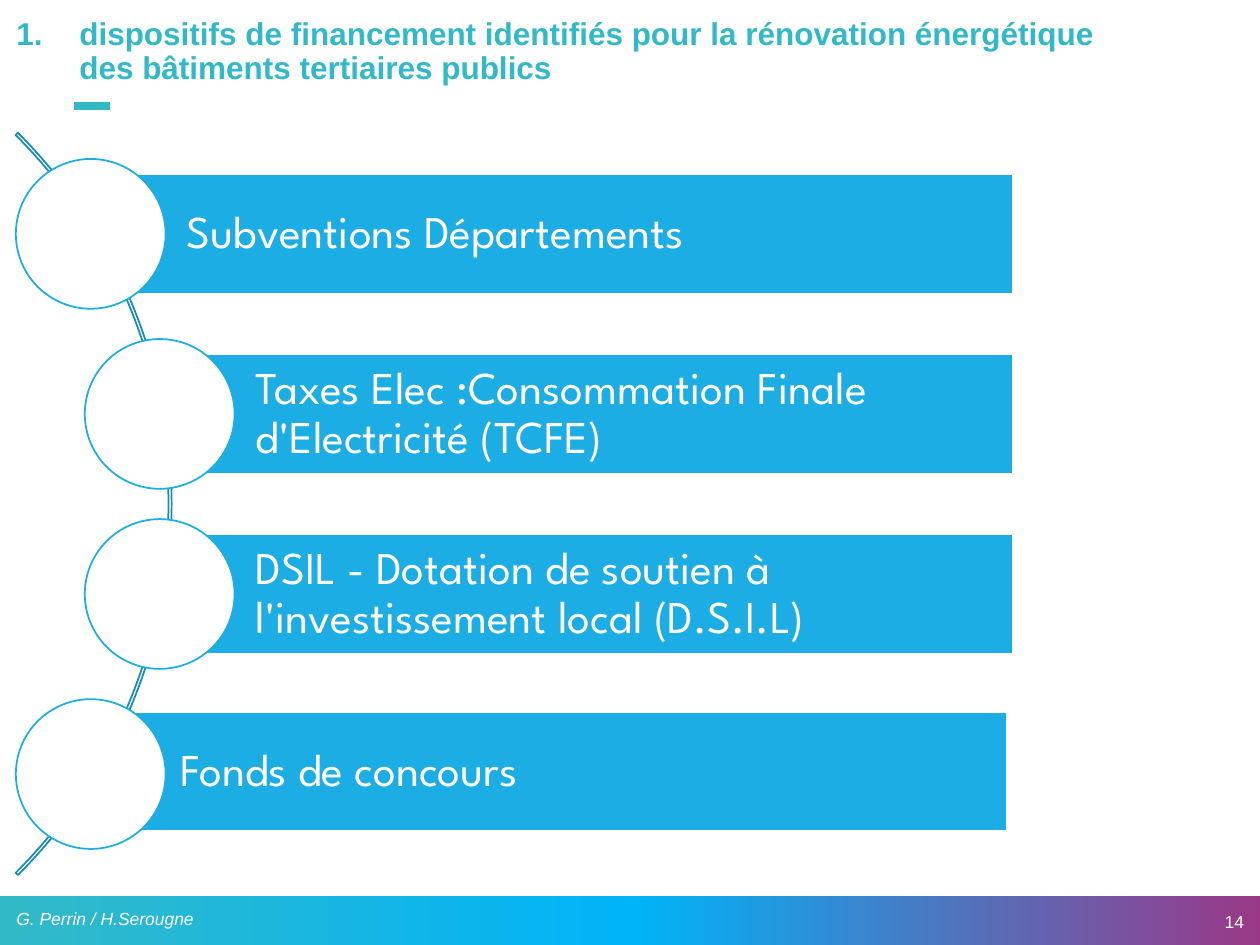
from copy import deepcopy

from lxml import etree
from pptx import Presentation
from pptx.dml.color import RGBColor
from pptx.enum.shapes import MSO_CONNECTOR, MSO_SHAPE
from pptx.enum.text import MSO_ANCHOR, PP_ALIGN
from pptx.oxml.ns import qn
from pptx.util import Cm, Pt

RECTANGLE, ELLIPSE, ARC = MSO_SHAPE.RECTANGLE, MSO_SHAPE.OVAL, MSO_SHAPE.BLOCK_ARC
STRAIGHT = MSO_CONNECTOR.STRAIGHT
TOP, MIDDLE = MSO_ANCHOR.TOP, MSO_ANCHOR.MIDDLE
LEFT, RIGHT = PP_ALIGN.LEFT, PP_ALIGN.RIGHT
COLORS = {"teal": "32B9C8", "azure": "00B4F8", "purple": "9B3787",
          "bar": "1CADE4", "arc": "168BB7", "white": "FFFFFF"}
ITEMS = [
    ("Subventions Départements", 1.83, 0, 0),
    ("Taxes Elec :Consommation Finale d'Electricité (TCFE)", 3.22, 0, 0),
    ("DSIL - Dotation de soutien à l'investissement local (D.S.I.L)", 3.22, 0, 0),
    ("Fonds de concours", 1.83, -0.13, -0.05),
]


def color(name):
    """Return the palette colour with this name."""
    return RGBColor.from_string(COLORS[name])


def write_text(shape, text, size, font="Arial", fill="white", bold=False, italic=False,
               align=LEFT, anchor=MIDDLE, spacing=1.0, insets=(0.25, 0.13, 0.25, 0.13)):
    """Write one formatted paragraph in a shape and return it."""
    frame = shape.text_frame
    frame.word_wrap = True
    frame.vertical_anchor = anchor
    (frame.margin_left, frame.margin_top,
     frame.margin_right, frame.margin_bottom) = map(Cm, insets)
    paragraph = frame.paragraphs[0]
    paragraph.alignment = align
    paragraph.line_spacing = spacing
    run = paragraph.add_run()
    run.text = text
    run.font.name, run.font.size = font, Pt(size)
    run.font.bold, run.font.italic = bold, italic
    run.font.color.rgb = color(fill)
    return paragraph


def add_text(slide, box, text, size, **formatting):
    """Add a text box and return its paragraph."""
    return write_text(slide.shapes.add_textbox(*map(Cm, box)), text, size, **formatting)


def add_shape(slide, kind, box, fill=None, line=None):
    """Add a preset shape with a plain fill and outline."""
    shape = slide.shapes.add_shape(kind, *map(Cm, box))
    shape.shadow.inherit = False
    if fill:
        shape.fill.solid()
        shape.fill.fore_color.rgb = color(fill)
    else:
        shape.fill.background()
    if line:
        shape.line.color.rgb = color(line)
        shape.line.width = Pt(1)
    else:
        shape.line.fill.background()
    return shape


def add_heading(slide, box):
    """Add the numbered heading and the short rule below it."""
    left, top, _, _ = box
    paragraph = add_text(
        slide, box,
        "dispositifs de financement identifiés pour la rénovation énergétique "
        "des bâtiments tertiaires publics",
        18, fill="teal", bold=True, anchor=TOP, spacing=0.9, insets=(0.25, 0, 0.25, 0))
    properties = paragraph._p.get_or_add_pPr()
    properties.set("marL", str(Cm(1.27)))
    properties.set("indent", str(-Cm(1.27)))
    bullet_font = etree.SubElement(properties, qn("a:buFont"))
    bullet_font.set("typeface", "+mj-lt")
    etree.SubElement(properties, qn("a:buAutoNum")).set("type", "arabicPeriod")

    rule_top = Cm(top + 1.77)
    rule = slide.shapes.add_connector(
        STRAIGHT, Cm(left + 1.42), rule_top, Cm(left + 2.13), rule_top)
    rule.line.color.rgb = color("teal")
    rule.line.width = Pt(4.5)
    etree.SubElement(rule._element.spPr, qn("a:effectLst"))


def add_curved_list(slide, box):
    """Add the arc and the bars with circles that follow it."""
    left, top, width, height = box
    diameter, bar_height = 3.02, 2.41
    pitch = height / len(ITEMS)
    arc_size = 21.16
    arc = add_shape(slide, ARC, (left - 18.03, top + (height - arc_size) / 2,
                                 arc_size, arc_size), line="arc")
    for index, value in enumerate((189, 27, 0.003)):
        arc.adjustments[index] = value

    for index, (text, center_x, shift_x, shift_y) in enumerate(ITEMS):
        center_y = top + pitch * (index + 0.5)
        bar_box = (center_x + shift_x, center_y - bar_height / 2 + shift_y,
                   left + width - center_x, bar_height)
        bar = add_shape(slide, RECTANGLE, bar_box, "bar", "white")
        write_text(bar, text, 26, font="League Spartan", spacing=0.9,
                   insets=(1.93, 0.18, 0.18, 0.18))
        add_shape(slide, ELLIPSE, (center_x - diameter / 2, center_y - diameter / 2,
                                   diameter, diameter), "white", "bar")


def add_footer(slide, box):
    """Add the gradient band with the authors and the page number."""
    left, top, _, _ = box
    band = add_shape(slide, RECTANGLE, box)
    band.fill.gradient()
    band.fill.gradient_angle = 0
    first = band.fill._fill._gradFill.gsLst[0]
    first.addnext(deepcopy(first))
    stops = zip(band.fill.gradient_stops, ("teal", "azure", "purple"), (0, 0.5, 1))
    for stop, name, position in stops:
        stop.color.rgb = color(name)
        stop.position = position
    add_text(slide, (left + 0.08, top - 0.05, 5.72, 1.02),
             "G. Perrin / H.Serougne", 10, italic=True)
    add_text(slide, (left + 19.61, top, 5.72, 1.02), "14", 10, align=RIGHT)


def main():
    """Build the slide and save it."""
    presentation = Presentation()
    presentation.slide_width, presentation.slide_height = Cm(25.4), Cm(19.05)
    slide = presentation.slides.add_slide(presentation.slide_layouts[6])
    add_footer(slide, (0, 18.06, 25.5, 0.99))
    add_heading(slide, (0.08, 0.36, 22.35, 1.9))
    add_curved_list(slide, (0.33, 2.9, 20.1, 14.52))
    presentation.save("out.pptx")


if __name__ == "__main__":
    main()
